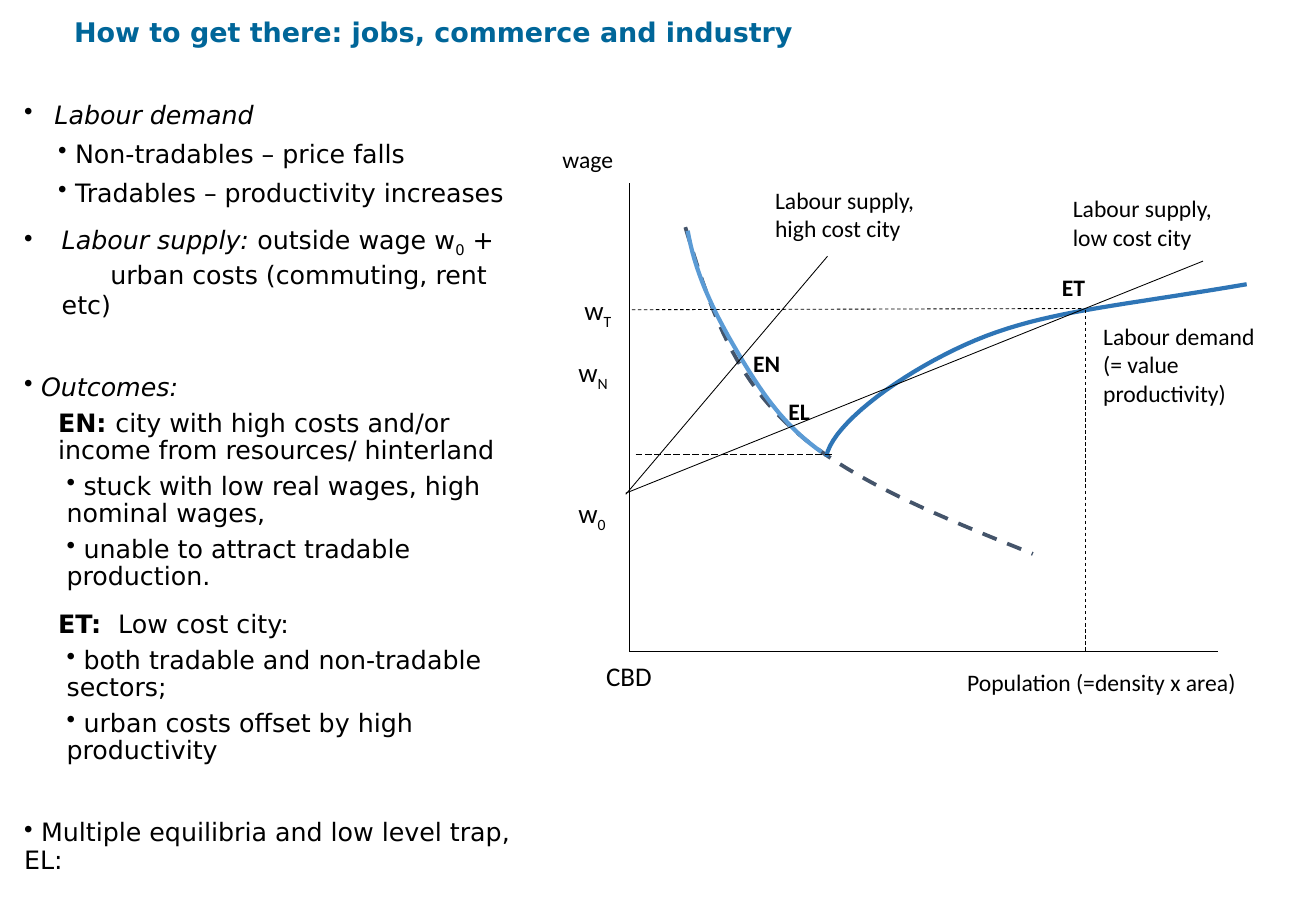
from pptx import Presentation
from pptx.dml.color import RGBColor
from pptx.enum.dml import MSO_LINE
from pptx.enum.shapes import MSO_CONNECTOR
from pptx.oxml.ns import qn
from pptx.util import Inches, Pt
from lxml.etree import SubElement

COLORS = {"text": "000000", "title": "006699", "nontradable": "5B9BD5",
          "tradable": "2E75B6", "extension": "44546A"}
STYLES = {"": {}, "i": {"italic": True}, "b": {"bold": True}, "sub": {}}

presentation = Presentation()
presentation.slide_width = Inches(10.83)
presentation.slide_height = Inches(7.5)
slide = presentation.slides.add_slide(presentation.slide_layouts[6])
shapes = slide.shapes


def add_text(box, paragraphs, size, font_name="Calibri", color="text", inset=None):
    frame = shapes.add_textbox(*map(Inches, box)).text_frame
    frame.word_wrap = True
    if inset is not None:
        for side in ("left", "top", "right", "bottom"):
            setattr(frame, f"margin_{side}", Inches(inset))
    for index, (layout, runs) in enumerate(paragraphs):
        paragraph = frame.add_paragraph() if index else frame.paragraphs[0]
        paragraph.space_before = Pt(layout.get("before", 0))
        paragraph.line_spacing = layout.get("spacing", 1.0)
        properties = paragraph._p.get_or_add_pPr()
        properties.set("marL", str(Inches(layout.get("margin", 0))))
        properties.set("indent", str(Inches(layout.get("indent", 0))))
        if layout.get("bullet"):
            SubElement(properties, qn("a:buChar")).set("char", "•")
        for text, style in runs:
            run = paragraph.add_run()
            run.text = text
            values = {"name": font_name, "size": Pt(size), **STYLES[style]}
            for attribute, value in values.items():
                setattr(run.font, attribute, value)
            run.font.color.rgb = RGBColor.from_string(COLORS[color])
            if style == "sub":
                run.font._element.set("baseline", "-25000")


def format_line(line, color, width, dash=None):
    line.color.rgb = RGBColor.from_string(COLORS[color])
    line.width = Pt(width)
    if dash:
        line.dash_style = dash


top_item = {"before": 10, "bullet": True}
sub_item = {"before": 5, "bullet": True, "margin": 0.28}
spaced_item = {"before": 32.5, "bullet": True, "spacing": 0.9}
city = {"before": 5, "margin": 0.28, "spacing": 0.9}
city_item = {"before": 5, "bullet": True, "margin": 0.35, "spacing": 0.9}

add_text((0.1, 0.77, 4.4, 6.52), [
    ({**top_item, "margin": 0.25, "indent": -0.25}, [("Labour demand", "i")]),
    (sub_item, [(" Non-tradables – price falls", "")]),
    (sub_item, [(" Tradables – productivity increases", "")]),
    ({**top_item, "margin": 0.31, "indent": -0.31},
     [("Labour supply: ", "i"), ("outside wage w", ""), ("0", "sub"), (" +", "")]),
    ({"margin": 0.31, "indent": 0.4}, [("urban costs (commuting, rent etc)", "")]),
    (spaced_item, [(" ", ""), ("Outcomes:", "i")]),
    (city, [("EN: ", "b"), ("city with high costs and/or income from resources/ hinterland", "")]),
    (city_item, [(" stuck with low real wages, high nominal wages,", "")]),
    (city_item, [(" unable to attract tradable production.", "")]),
    ({**city, "before": 12}, [("ET: ", "b"), (" Low cost city:", "")]),
    (city_item, [(" both tradable and non-tradable sectors;", "")]),
    (city_item, [(" urban costs offset by high productivity", "")]),
    (spaced_item, [(" Multiple equilibria and low level trap, EL:", "")]),
], 15, "DejaVu Sans")

add_text((0.61, 0.13, 7.96, 0.47),
         [({}, [("How to get there: jobs, commerce and industry", "b")])],
         16, "DejaVu Sans", "title", 0)

curves = [
    ("extension", 2.25, MSO_LINE.DASH,
     [(5.64, 1.87), (5.82, 2.46), (6, 3.04), (6.48, 3.49),
      (6.95, 3.94), (7.73, 4.25), (8.5, 4.56)]),
    ("tradable", 2.5, None,
     [(6.8, 3.76), (6.85, 3.48), (7.46, 3.04), (8.03, 2.8),
      (8.61, 2.56), (9.15, 2.53), (10.26, 2.34)]),
    ("nontradable", 2.5, None,
     [(5.66, 1.9), (5.73, 2.3), (5.92, 2.65), (6.1, 2.95),
      (6.28, 3.25), (6.46, 3.51), (6.76, 3.72)]),
]
STEPS = 20
for color, width, dash, controls in curves:
    points = []
    for first in (0, 3):
        for step in range(1, STEPS + 1):
            t = step / STEPS
            weights = ((1 - t) ** 3, 3 * t * (1 - t) ** 2, 3 * t ** 2 * (1 - t), t ** 3)
            points.append(tuple(
                Inches(sum(weight * control[axis] for weight, control
                           in zip(weights, controls[first:first + 4])))
                for axis in (0, 1)))
    builder = shapes.build_freeform(*map(Inches, controls[0]))
    builder.add_line_segments(points, close=False)
    curve = builder.convert_to_shape()
    curve.shadow.inherit = False
    curve.fill.background()
    format_line(curve.line, color, width, dash)

lines = [
    (5.18, 1.51, 5.18, 5.36, None),
    (5.18, 5.36, 10.02, 5.36, None),
    (5.15, 4.06, 9.9, 2.15, None),
    (5.15, 4.07, 6.81, 2.11, None),
    (8.93, 2.55, 8.93, 5.36, MSO_LINE.DASH),
    (5.2, 2.55, 8.91, 2.54, MSO_LINE.DASH),
    (5.23, 3.74, 6.86, 3.74, MSO_LINE.LONG_DASH),
]
for *ends, dash in lines:
    connector = shapes.add_connector(MSO_CONNECTOR.STRAIGHT, *map(Inches, ends))
    format_line(connector.line, "text", 0.5, dash)
    SubElement(connector._element.spPr, qn("a:effectLst"))

labels = [
    ((4.53, 1.14, 1.11, 0.47), "wage", "", 14),
    ((6.28, 1.48, 1.71, 0.65), "Labour supply, high cost city", "", 14),
    ((8.73, 1.55, 1.65, 0.62), "Labour supply, low cost city", "", 14),
    ((8.98, 2.6, 1.51, 0.87), "Labour demand (= value productivity)", "", 14),
    ((7.86, 5.45, 2.68, 0.4), "Population (=density x area)", "", 14),
    ((4.89, 5.38, 1.1, 0.47), "CBD", "", 16),
    ((6.1, 2.82, 0.61, 0.47), "EN", "b", 14),
    ((8.64, 2.2, 0.43, 0.47), "ET", "b", 14),
    ((6.39, 3.22, 0.59, 0.44), "EL", "b", 14),
]
for box, text, style, size in labels:
    add_text(box, [({}, [(text, style)])], size)

for subscript, left, top in (("T", 4.81, 2.42), ("N", 4.76, 2.93), ("0", 4.76, 4.09)):
    add_text((left, top, 0.4, 0.3), [({}, [("w", ""), (subscript, "sub")])], 16, inset=0)

presentation.save("out.pptx")
